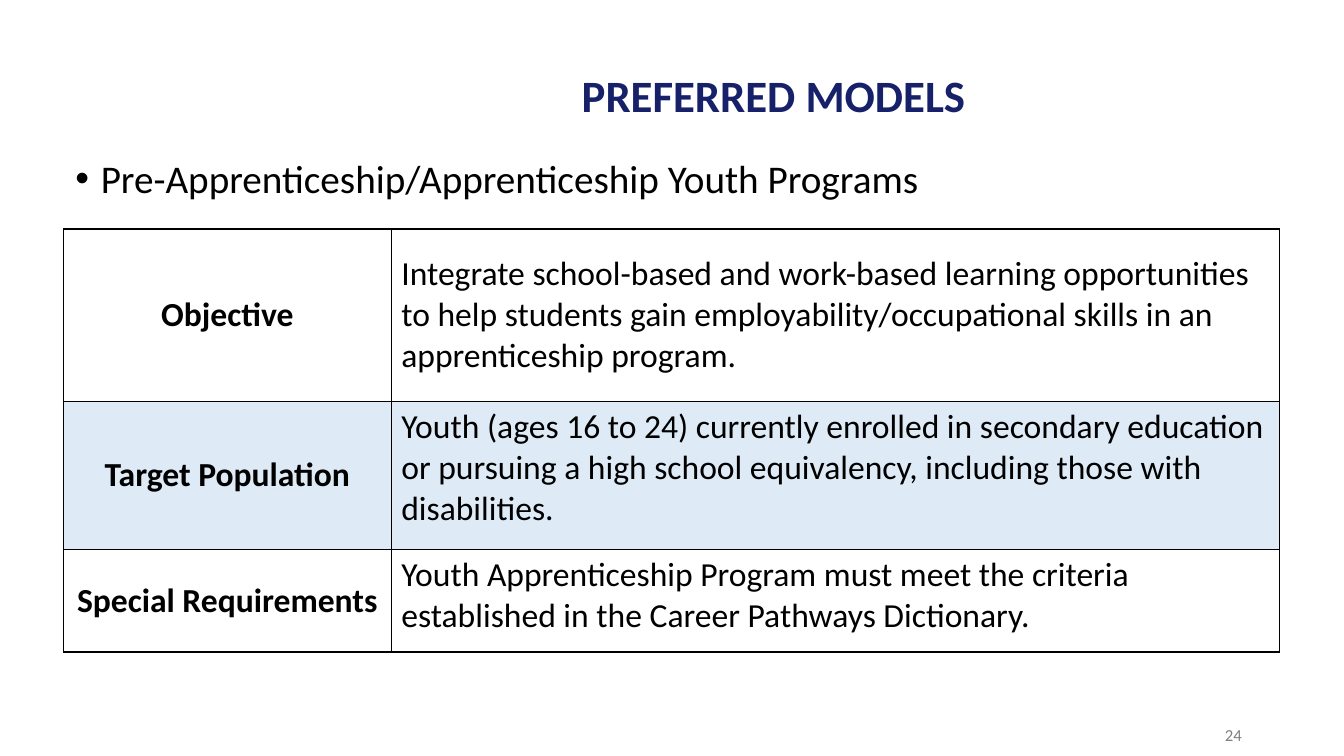
from lxml.etree import SubElement
from pptx import Presentation
from pptx.dml.color import RGBColor
from pptx.enum.text import MSO_ANCHOR, PP_ALIGN
from pptx.oxml import parse_xml
from pptx.oxml.ns import nsdecls, qn
from pptx.util import Cm, Pt

FONT = "Calibri"
NAVY = RGBColor(0x17, 0x21, 0x69)
BLACK = RGBColor(0x00, 0x00, 0x00)
GRAY = RGBColor(0x80, 0x80, 0x80)
BLUE = RGBColor(0x5B, 0x9B, 0xD5)
BLUE_OPACITY = 20  # percent

TITLE = "PREFERRED MODELS"
BULLET = "Pre-Apprenticeship/Apprenticeship Youth Programs"
PAGE_NUMBER = "24"
# label, description, row height in cm, description anchor, shaded
ROWS = [
    ("Objective",
     "Integrate school-based and work-based learning opportunities to help students "
     "gain employability/occupational skills in an apprenticeship program.",
     4.34, MSO_ANCHOR.MIDDLE, False),
    ("Target Population",
     "Youth (ages 16 to 24) currently enrolled in secondary education or pursuing "
     "a high school equivalency, including those with disabilities.",
     3.73, MSO_ANCHOR.TOP, True),
    ("Special Requirements",
     "Youth Apprenticeship Program must meet the criteria established in the "
     "Career Pathways Dictionary.",
     2.59, MSO_ANCHOR.TOP, False),
]
COLUMN_WIDTHS = (8.26, 22.38)
TABLE_LEFT, TABLE_TOP = 1.6, 5.77


def style_paragraph(paragraph, size, color, bold=False, alignment=PP_ALIGN.LEFT):
    paragraph.alignment = alignment
    font = paragraph.font
    font.name, font.size, font.bold = FONT, Pt(size), bold
    font.color.rgb = color


def add_text(slide, box, text, anchor=MSO_ANCHOR.MIDDLE):
    """Add a wrapped text box and return its only paragraph."""
    frame = slide.shapes.add_textbox(*(Cm(length) for length in box)).text_frame
    frame.word_wrap = True
    frame.vertical_anchor = anchor
    frame.text = text
    return frame.paragraphs[0]


def add_bullet(paragraph):
    properties = paragraph._p.get_or_add_pPr()
    properties.set("marL", str(Cm(0.64)))
    properties.set("indent", str(-Cm(0.64)))
    SubElement(properties, qn("a:buFont"), typeface="Arial")
    SubElement(properties, qn("a:buChar"), char="•")


def add_borders(cell):
    properties = cell._tc.get_or_add_tcPr()
    for index, side in enumerate(("lnL", "lnR", "lnT", "lnB")):
        properties.insert(index, parse_xml(
            f'<a:{side} {nsdecls("a")} w="{Pt(1)}"><a:solidFill>'
            f'<a:srgbClr val="{BLACK}"/></a:solidFill></a:{side}>'))


def fill_cell(cell, shaded):
    if not shaded:
        cell.fill.background()
        return
    cell.fill.solid()
    cell.fill.fore_color.rgb = BLUE
    color = cell._tc.tcPr.find(".//" + qn("a:srgbClr"))
    SubElement(color, qn("a:alpha"), val=str(BLUE_OPACITY * 1000))


def add_model_table(slide):
    heights = [row[2] for row in ROWS]
    table = slide.shapes.add_table(
        len(ROWS), len(COLUMN_WIDTHS), Cm(TABLE_LEFT), Cm(TABLE_TOP),
        Cm(sum(COLUMN_WIDTHS)), Cm(sum(heights))).table
    table.first_row = table.horz_banding = False
    for column, width in zip(table.columns, COLUMN_WIDTHS):
        column.width = Cm(width)
    for row, (label, description, height, anchor, shaded) in zip(table.rows, ROWS):
        row.height = Cm(height)
        label_cell, description_cell = row.cells
        label_cell.text, description_cell.text = label, description
        label_cell.vertical_anchor = MSO_ANCHOR.MIDDLE
        description_cell.vertical_anchor = anchor
        style_paragraph(label_cell.text_frame.paragraphs[0], 24, BLACK, True, PP_ALIGN.CENTER)
        style_paragraph(description_cell.text_frame.paragraphs[0], 24, BLACK)
        for cell in row.cells:
            fill_cell(cell, shaded)
            add_borders(cell)


def main():
    presentation = Presentation()
    presentation.slide_width, presentation.slide_height = Cm(33.87), Cm(19.05)
    slide = presentation.slides.add_slide(presentation.slide_layouts[6])

    title = add_text(slide, (8.92, 1.7, 21.16, 1.55), TITLE)
    title.line_spacing = 0.9
    style_paragraph(title, 32, NAVY, True, PP_ALIGN.CENTER)

    bullet = add_text(slide, (1.65, 3.89, 29.21, 11.28), BULLET, MSO_ANCHOR.TOP)
    bullet.line_spacing = 0.9
    add_bullet(bullet)
    style_paragraph(bullet, 28, BLACK)

    page_number = add_text(slide, (23.93, 18.01, 7.62, 1.02), PAGE_NUMBER)
    style_paragraph(page_number, 12, GRAY, alignment=PP_ALIGN.RIGHT)

    add_model_table(slide)
    presentation.save("out.pptx")


if __name__ == "__main__":
    main()
